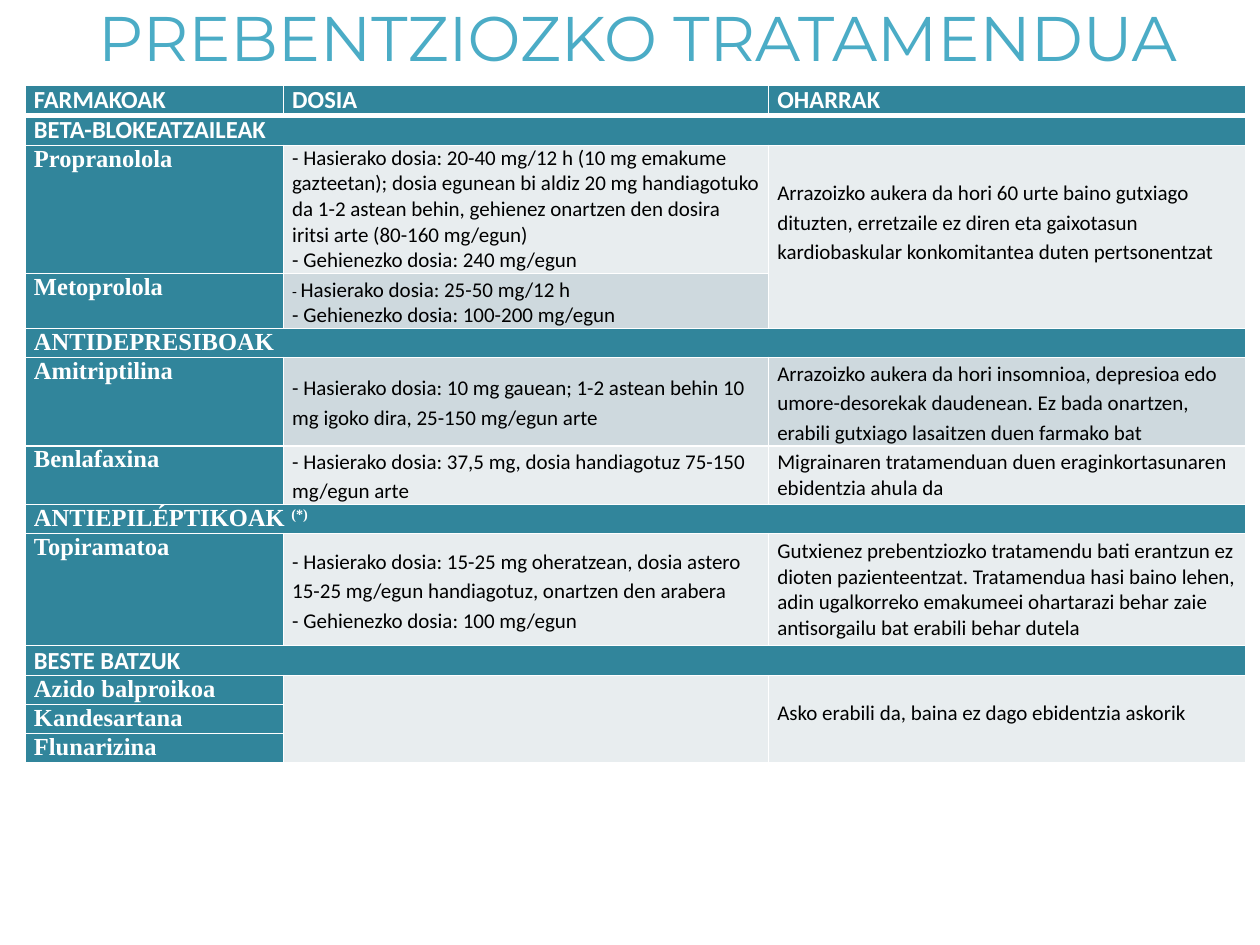
from lxml.etree import SubElement
from pptx import Presentation
from pptx.dml.color import RGBColor
from pptx.enum.text import MSO_ANCHOR as Anchor, MSO_AUTO_SIZE as AutoSize, PP_ALIGN as Align
from pptx.oxml import parse_xml
from pptx.oxml.ns import nsdecls, qn
from pptx.util import Inches, Pt

WHITE = RGBColor(0xFF, 0xFF, 0xFF)
BLACK = RGBColor(0, 0, 0)
TITLE_BLUE = RGBColor(0x4B, 0xAC, 0xC6)
TEAL = RGBColor(0x31, 0x85, 0x9B)
LIGHT = RGBColor(0xE8, 0xED, 0xEF)
DARK = RGBColor(0xCE, 0xD9, 0xDE)
SANS, SERIF = "Calibri", "Times New Roman"
WIDE = 1.15

COLUMN_WIDTHS = [2.05, 3.85, 3.79]
ROW_HEIGHTS = [0.23, 0.23, 0.79, 0.42, 0.23, 0.63, 0.43, 0.23, 0.89, 0.23, 0.23, 0.23, 0.23]
HEADERS = ["FARMAKOAK", "DOSIA", "OHARRAK"]
SECTIONS = {
    1: ("BETA-BLOKEATZAILEAK", SANS),
    4: ("ANTIDEPRESIBOAK", SERIF),
    7: ("ANTIEPILÉPTIKOAK ", SERIF),
    9: ("BESTE BATZUK", SANS),
}
DRUGS = {
    2: "Propranolola", 3: "Metoprolola", 5: "Amitriptilina", 6: "Benlafaxina",
    8: "Topiramatoa", 10: "Azido balproikoa", 11: "Kandesartana", 12: "Flunarizina",
}
DETAILS = {
    (2, 1): (LIGHT, [
        (1, "- Hasierako dosia: 20-40 mg/12 h (10 mg emakume gazteetan); dosia egunean bi aldiz "
            "20 mg handiagotuko da 1-2 astean behin, gehienez onartzen den dosira iritsi arte "
            "(80-160 mg/egun)"),
        (1, "- Gehienezko dosia: 240 mg/egun")]),
    (2, 2): (LIGHT, [
        (WIDE, "Arrazoizko aukera da hori 60 urte baino gutxiago dituzten, erretzaile ez diren "
               "eta gaixotasun kardiobaskular konkomitantea duten pertsonentzat")]),
    (3, 1): (DARK, [
        (WIDE, "Hasierako dosia: 25-50 mg/12 h"),
        (1, "- Gehienezko dosia: 100-200 mg/egun")]),
    (5, 1): (DARK, [
        (WIDE, "- Hasierako dosia: 10 mg gauean; 1-2 astean behin 10 mg igoko dira, "
               "25-150 mg/egun arte")]),
    (5, 2): (DARK, [
        (WIDE, "Arrazoizko aukera da hori insomnioa, depresioa edo umore-desorekak daudenean. "
               "Ez bada onartzen, erabili gutxiago lasaitzen duen farmako bat")]),
    (6, 1): (LIGHT, [
        (WIDE, "- Hasierako dosia: 37,5 mg, dosia handiagotuz 75-150 mg/egun arte")]),
    (6, 2): (LIGHT, [
        (1, "Migrainaren tratamenduan duen eraginkortasunaren ebidentzia ahula da")]),
    (8, 1): (LIGHT, [
        (WIDE, "- Hasierako dosia: 15-25 mg oheratzean, dosia astero 15-25 mg/egun handiagotuz, "
               "onartzen den arabera"),
        (WIDE, "- Gehienezko dosia: 100 mg/egun")]),
    (8, 2): (LIGHT, [
        (1, "Gutxienez prebentziozko tratamendu bati erantzun ez dioten pazienteentzat. "
            "Tratamendua hasi baino lehen, adin ugalkorreko emakumeei ohartarazi behar zaie "
            "antisorgailu bat erabili behar dutela")]),
    (10, 2): (LIGHT, [(1, "Asko erabili da, baina ez dago ebidentzia askorik")]),
}
TOP_MARGINS = {(2, 2): 0.25, (10, 2): 0.2}
SMALL_DASH_CELL = (3, 1)


def add_run(paragraph, text, font_name, size, color, bold=False):
    """Add one formatted run to a paragraph and return it."""
    run = paragraph.add_run()
    run.text = text
    run.font.name = font_name
    run.font.size = Pt(size)
    run.font.bold = bold
    run.font.color.rgb = color
    return run


def style_cell(cell, fill, bottom_width=1):
    """Give a cell its margins, fill and white borders."""
    cell.margin_left = cell.margin_right = Inches(0.07)
    cell.margin_top = cell.margin_bottom = 0
    cell.fill.solid()
    cell.fill.fore_color.rgb = fill
    properties = cell._tc.get_or_add_tcPr()
    widths = {"lnL": 1, "lnR": 1, "lnT": 1, "lnB": bottom_width}
    for index, (side, width) in enumerate(widths.items()):
        properties.insert(index, parse_xml(
            f'<a:{side} {nsdecls("a")} w="{Pt(width)}"><a:solidFill>'
            f'<a:srgbClr val="{WHITE}"/></a:solidFill></a:{side}>'))


def write_label(cell, text, font_name):
    """Write a bold white label in a teal cell and return its paragraph."""
    paragraph = cell.text_frame.paragraphs[0]
    paragraph.alignment = Align.JUSTIFY
    add_run(paragraph, text, font_name, 14, WHITE, True)
    return paragraph


def write_details(cell, lines, position):
    """Write the paragraphs of a dose or remark cell."""
    cell.vertical_anchor = Anchor.TOP if position in TOP_MARGINS else Anchor.MIDDLE
    cell.margin_top = Inches(TOP_MARGINS.get(position, 0))
    for index, (spacing, text) in enumerate(lines):
        frame = cell.text_frame
        paragraph = frame.add_paragraph() if index else frame.paragraphs[0]
        paragraph.line_spacing = float(spacing)
        if position == SMALL_DASH_CELL and index == 0:
            add_run(paragraph, "- ", SANS, 9, BLACK)
        add_run(paragraph, text, SANS, 12, BLACK)


def add_title(slide, left, top, width, height):
    """Place and format the title placeholder."""
    title = slide.shapes.title
    title.left, title.top, title.width, title.height = left, top, width, height
    frame = title.text_frame
    frame.auto_size = AutoSize.NONE
    frame.vertical_anchor = Anchor.MIDDLE
    paragraph = frame.paragraphs[0]
    paragraph.alignment = Align.CENTER
    add_run(paragraph, "PREBENTZIOZKO TRATAMENDUA", "Montserrat", 36, TITLE_BLUE)


def add_treatment_table(slide, left, top, width, height):
    """Add the table of drugs, doses and remarks."""
    table = slide.shapes.add_table(
        len(ROW_HEIGHTS), len(COLUMN_WIDTHS), left, top, width, height).table
    for column, column_width in zip(table.columns, COLUMN_WIDTHS):
        column.width = Inches(column_width)
    for row, row_height in zip(table.rows, ROW_HEIGHTS):
        row.height = Inches(row_height)

    for row in range(len(ROW_HEIGHTS)):
        for column in range(len(COLUMN_WIDTHS)):
            cell = table.cell(row, column)
            position = (row, column)
            is_label = column == 0 or row == 0 or row in SECTIONS
            fill, lines = DETAILS.get(position, (TEAL if is_label else LIGHT, []))
            style_cell(cell, fill, 3 if row == 0 else 1)
            if row == 0:
                write_label(cell, HEADERS[column], SANS)
            elif column == 0 and row in SECTIONS:
                paragraph = write_label(cell, *SECTIONS[row])
                if row == 7:
                    mark = add_run(paragraph, "(*)", SERIF, 14, WHITE, True)
                    mark.font._element.set("baseline", "30000")
            elif column == 0:
                write_label(cell, DRUGS[row], SERIF)
            elif lines:
                write_details(cell, lines, position)
            else:
                paragraph = cell.text_frame.paragraphs[0]
                SubElement(paragraph._p, qn("a:endParaRPr")).set("sz", "1200")

    for row in SECTIONS:
        table.cell(row, 0).merge(table.cell(row, 2))
    table.cell(2, 2).merge(table.cell(3, 2))
    for column in (1, 2):
        table.cell(10, column).merge(table.cell(12, column))


def main():
    """Build and save the slide."""
    presentation = Presentation()
    presentation.slide_width, presentation.slide_height = Inches(10), Inches(7.5)
    slide = presentation.slides.add_slide(presentation.slide_layouts[5])
    add_treatment_table(slide, Inches(0.2), Inches(0.68), Inches(9.69), Inches(4.8))
    add_title(slide, Inches(0.12), Inches(-0.34), Inches(9.88), Inches(1.25))
    presentation.save("out.pptx")


if __name__ == "__main__":
    main()
